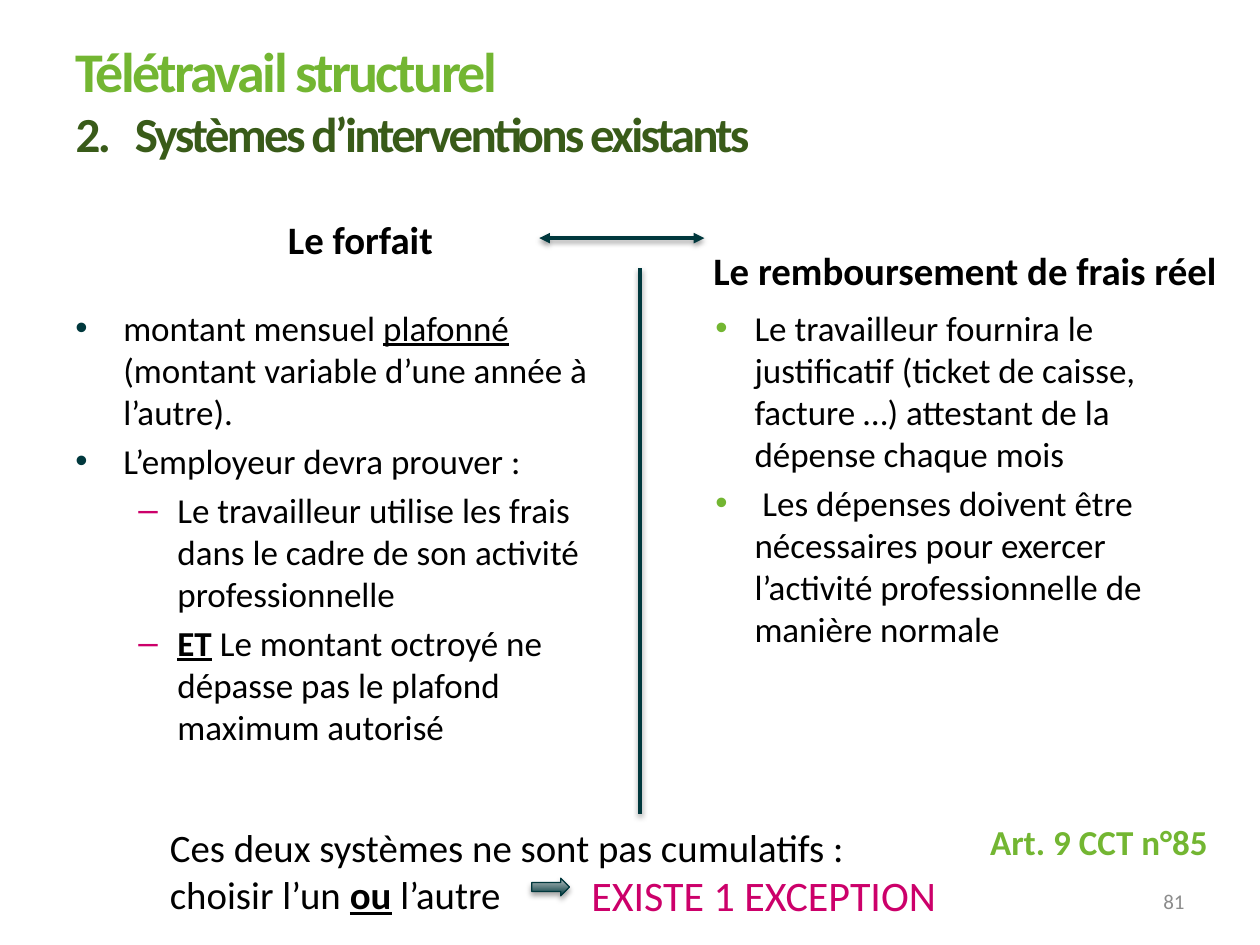
"""Build the slide comparing the two existing structural telework allowance systems."""
from lxml import etree
from pptx import Presentation
from pptx.dml.color import RGBColor
from pptx.enum.shapes import MSO_CONNECTOR, MSO_SHAPE
from pptx.enum.text import MSO_ANCHOR, MSO_AUTO_SIZE, PP_ALIGN
from pptx.oxml.ns import qn
from pptx.util import Inches, Pt

COLORS = {
    "green": "73B632", "forest": "395B19", "teal": "00383D", "edge": "00373C",
    "mist": "B9C2C3", "pink": "CC006A", "grey": "8C8C8C", "black": "000000",
}
TOP, MIDDLE, BOTTOM = MSO_ANCHOR.TOP, MSO_ANCHOR.MIDDLE, MSO_ANCHOR.BOTTOM
LEFT, CENTER, RIGHT = PP_ALIGN.LEFT, PP_ALIGN.CENTER, PP_ALIGN.RIGHT
FONT = "Calibri"
TITLE_ONLY = 5


def rgb(name):
    return RGBColor.from_string(COLORS[name])


class SlideBuilder:
    """Hold the style and the current page, and add each kind of element."""

    def __init__(self, page):
        self.page = page

    def add_span(self, para, text, size, color="black", bold=False, underline=False):
        span = para.add_run()
        span.text = text
        font = span.font
        font.name, font.size, font.bold = FONT, Pt(size), bold
        font.underline = underline
        font.color.rgb = rgb(color)
        return span

    def add_title(self, bounds, lines):
        title = self.page.shapes.title
        title.left, title.top, title.width, title.height = map(Inches, bounds)
        frame = title.text_frame
        frame.auto_size = MSO_AUTO_SIZE.NONE
        frame.vertical_anchor = MIDDLE
        for index, (text, size, color, hang) in enumerate(lines):
            para = frame.add_paragraph() if index else frame.paragraphs[0]
            para.alignment = LEFT
            self.set_indent(para, hang, hang)
            span = self.add_span(para, text, size, color, bold=True)
            span.font._element.set("spc", "-150")

    def set_indent(self, para, margin, hang):
        properties = para._p.get_or_add_pPr()
        properties.set("marL", str(Inches(margin)))
        properties.set("indent", str(-Inches(hang)))
        return properties

    def add_box(self, bounds, anchor=TOP):
        box = self.page.shapes.add_textbox(*map(Inches, bounds))
        frame = box.text_frame
        frame.word_wrap = True
        frame.vertical_anchor = anchor
        return frame

    def add_text(self, bounds, spans, size, color="black", align=LEFT, anchor=MIDDLE, bold=False):
        para = self.add_box(bounds, anchor).paragraphs[0]
        para.alignment = align
        for text, strong in spans:
            self.add_span(para, text, size, color, bold or strong, strong)

    def add_bullets(self, bounds, items, size=20):
        frame = self.add_box(bounds)
        for index, (char, color, margin, hang, spans) in enumerate(items):
            para = frame.add_paragraph() if index else frame.paragraphs[0]
            properties = self.set_indent(para, margin, hang)
            if index:
                para.space_before = Pt(size * 0.2)
            bullet_color = etree.SubElement(properties, qn("a:buClr"))
            etree.SubElement(bullet_color, qn("a:srgbClr"), val=COLORS[color])
            etree.SubElement(properties, qn("a:buFont"), typeface="Arial")
            etree.SubElement(properties, qn("a:buChar"), char=char)
            for text, bold, underline in spans:
                self.add_span(para, text, size, bold=bold, underline=underline)

    def add_shadow(self, shape, opacity, distance):
        effects = etree.SubElement(shape._element.spPr, qn("a:effectLst"))
        shadow = etree.SubElement(
            effects, qn("a:outerShdw"), blurRad=str(Pt(3.1)), dist=str(Pt(distance)),
            dir="5400000", rotWithShape="0")
        color = etree.SubElement(shadow, qn("a:srgbClr"), val=COLORS["black"])
        etree.SubElement(color, qn("a:alpha"), val=str(opacity * 1000))

    def add_line(self, start, end, double_arrow=False):
        line = self.page.shapes.add_connector(MSO_CONNECTOR.STRAIGHT, *map(Inches, start + end))
        line.line.color.rgb = rgb("teal")
        line.line.width = Pt(2)
        if double_arrow:
            outline = line.line._get_or_add_ln()
            for tag in ("a:headEnd", "a:tailEnd"):
                etree.SubElement(outline, qn(tag), type="triangle")
        self.add_shadow(line, 38, 1.6)

    def add_arrow(self, bounds):
        arrow = self.page.shapes.add_shape(MSO_SHAPE.RIGHT_ARROW, *map(Inches, bounds))
        arrow.fill.gradient()
        arrow.fill.gradient_angle = 90
        for stop, color in zip(arrow.fill.gradient_stops, ("teal", "mist")):
            stop.color.rgb = rgb(color)
        arrow.line.color.rgb = rgb("edge")
        arrow.line.width = Pt(0.75)
        self.add_shadow(arrow, 35, 1.8)


def main():
    deck = Presentation()
    deck.slide_width, deck.slide_height = Inches(10), Inches(7.5)
    page = deck.slides.add_slide(deck.slide_layouts[TITLE_ONLY])
    builder = SlideBuilder(page)

    builder.add_title((0.5, 0.15, 9, 1.28), [
        ("Télétravail structurel", 32, "green", 0),
        ("2.\tSystèmes d’interventions existants", 28, "forest", 0.47),
    ])
    for left, top, heading in (
        (0.65, 1.43, "Le forfait"),
        (5.45, 1.68, "Le remboursement de frais réel"),
    ):
        builder.add_text((left, top, 4.42, 0.7), [(heading, False)], 22.2,
                         align=CENTER, anchor=BOTTOM, bold=True)

    main_point = ("•", "teal", 0.38, 0.38)
    condition = ("–", "pink", 0.81, 0.31)
    cost_rule = ("•", "green", 0.81, 0.31)
    builder.add_bullets((0.5, 2.38, 4.42, 4.32), [
        (*main_point, [("montant mensuel ", False, False), ("plafonné", False, True),
                       (" (montant variable d’une année à l’autre).", False, False)]),
        (*main_point, [("L’employeur devra prouver\u00a0:", False, False)]),
        (*condition, [("Le travailleur utilise les frais dans le cadre de son activité "
                       "professionnelle", False, False)]),
        (*condition, [("ET", True, True),
                      (" Le montant octroyé ne dépasse pas le plafond maximum autorisé",
                       False, False)]),
    ])
    builder.add_bullets((5.08, 2.38, 4.55, 4.32), [
        (*cost_rule, [("Le travailleur fournira le justificatif (ticket de caisse, facture …) "
                       "attestant de la dépense chaque mois", False, False)]),
        (*cost_rule, [(" Les dépenses doivent être nécessaires pour exercer l’activité "
                       "professionnelle de manière normale", False, False)]),
    ])

    builder.add_text((7.17, 6.95, 2.33, 0.4), [("81", False)], 12, "grey", RIGHT)
    builder.add_text((7.76, 6.46, 2.1, 0.44), [("Art. 9 CCT n°85", False)], 20, "green",
                     anchor=TOP, bold=True)
    builder.add_text((1.25, 6.54, 6.03, 0.74), [
        ("Ces deux systèmes ne sont pas cumulatifs\u00a0: choisir l’un ", False),
        ("ou", True), (" l’autre", False),
    ], 22.2)
    builder.add_line((4.28, 1.89), (5.59, 1.89), double_arrow=True)
    builder.add_text((4.52, 6.73, 3.5, 0.74), [(" EXISTE 1 EXCEPTION", False)], 24, "pink")
    builder.add_arrow((4.22, 6.97, 0.3, 0.14))
    builder.add_line((5.08, 2.13), (5.08, 6.46))
    deck.save("out.pptx")


if __name__ == "__main__":
    main()
